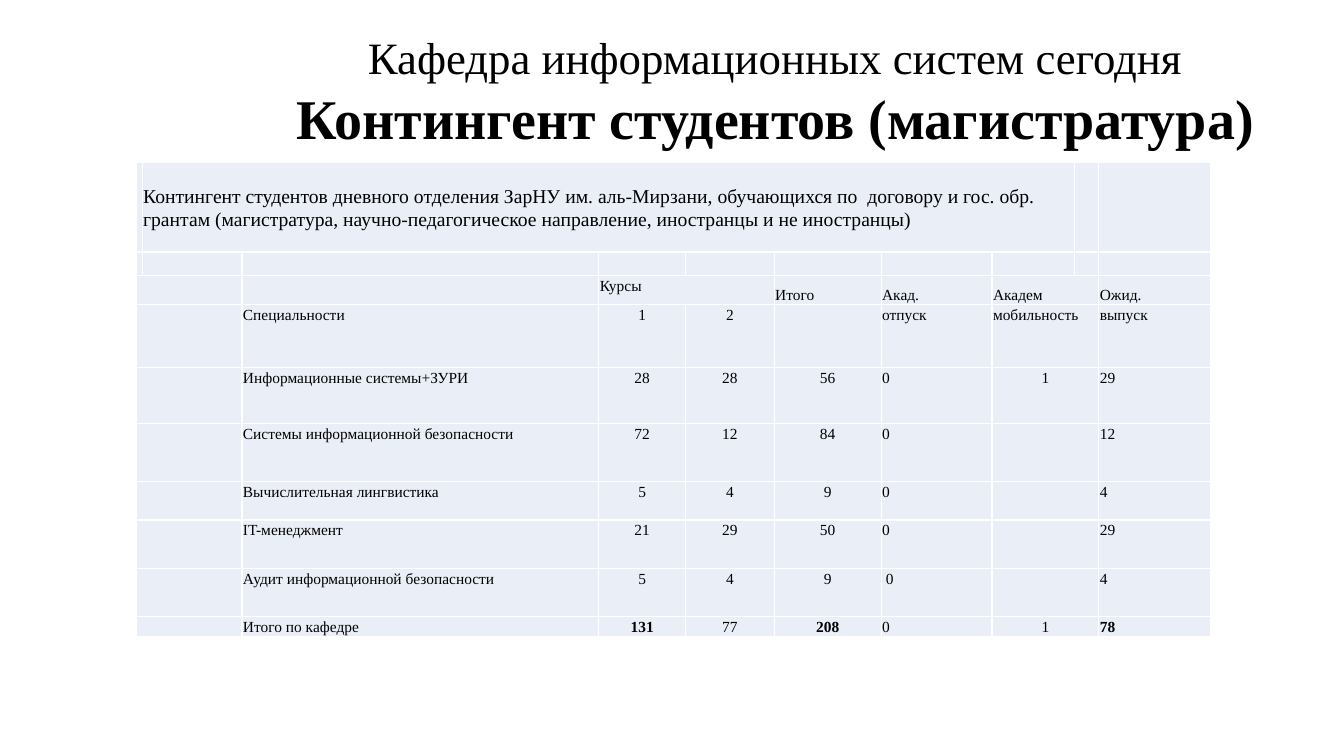
from pptx import Presentation
from pptx import util as u
from pptx.dml.color import RGBColor
from pptx.enum import text

COLORS = {"ink": "000000", "cell": "EAEFF7"}
FONT = "Times New Roman"
COLUMN_WIDTHS = [0.06, 0.99, 3.54, 0.86, 0.88, 1.06, 1.1, 0.82, 0.24, 1.11]
ROW_HEIGHTS = [0.89, 0.23, 0.29, 0.63, 0.55, 0.58, 0.38, 0.48, 0.48, 0.17]
FIELD_COLUMNS = [2, 3, 4, 5, 6, 7, 9]
CENTERED_COLUMNS = {3, 4, 5, 7}
CAPTION = (
    "Контингент студентов дневного отделения ЗарНУ им. аль-Мирзани, "
    "обучающихся по  договору и гос. обр. грантам (магистратура, "
    "научно-педагогическое направление, иностранцы и не иностранцы)"
)
HEADINGS = ["", "Курсы", "", "Итого", "Акад.", "Академ", "Ожид."]
SUBHEADINGS = ["Специальности", "1", "2", "", "отпуск", "мобильность", "выпуск"]
SPECIALTIES = [
    ["Информационные системы+ЗУРИ", "28", "28", "56", "0", "1", "29"],
    ["Системы информационной безопасности", "72", "12", "84", "0", "", "12"],
    ["Вычислительная лингвистика", "5", "4", "9", "0", "", "4"],
    ["IT-менеджмент", "21", "29", "50", "0", "", "29"],
    ["Аудит информационной безопасности", "5", "4", "9", " 0", "", "4"],
    ["Итого по кафедре", "131", "77", "208", "0", "1", "78"],
]
BOLD_TOTALS = {"131", "208", "78"}


def add_run(paragraph, words, size, bold=False):
    run = paragraph.add_run()
    run.text = words
    run.font.name = FONT
    run.font.size = u.Pt(size)
    run.font.bold = bold
    run.font.color.rgb = RGBColor.from_string(COLORS["ink"])


def fill_title(title):
    title.left, title.top = u.Inches(2.05), u.Inches(0.24)
    title.width, title.height = u.Inches(11.28), u.Inches(1.25)
    frame = title.text_frame
    frame.word_wrap = True
    frame.auto_size = text.MSO_AUTO_SIZE.NONE
    frame.vertical_anchor = text.MSO_ANCHOR.TOP
    heading = frame.paragraphs[0]
    heading.alignment = text.PP_ALIGN.CENTER
    heading.line_spacing = 1.0
    add_run(heading, "Кафедра информационных систем сегодня", 32)
    heading.add_line_break()
    add_run(heading, "Контингент студентов (магистратура)", 40, True)


def style_cell(cell):
    cell.fill.solid()
    cell.fill.fore_color.rgb = RGBColor.from_string(COLORS["cell"])
    cell.margin_left = cell.margin_right = cell.margin_top = u.Inches(0.01)
    cell.margin_bottom = 0
    paragraph = cell.text_frame.paragraphs[0]
    paragraph._p.get_or_add_endParaRPr().set("sz", "1100")


def write_cell(cell, words, size=11, centered=False, bold=False,
               anchor=text.MSO_ANCHOR.TOP):
    cell.vertical_anchor = anchor
    paragraph = cell.text_frame.paragraphs[0]
    paragraph.alignment = text.PP_ALIGN.CENTER if centered else text.PP_ALIGN.LEFT
    paragraph.line_spacing = 1.07
    paragraph.space_after = u.Pt(8)
    add_run(paragraph, words, size, bold)


def add_enrolment_grid(slide):
    enrolment = slide.shapes.add_table(
        len(ROW_HEIGHTS), len(COLUMN_WIDTHS), u.Inches(1.35), u.Inches(1.61),
        u.Inches(sum(COLUMN_WIDTHS)), u.Inches(sum(ROW_HEIGHTS))).table
    enrolment.first_row = enrolment.horz_banding = False
    for column, width in zip(enrolment.columns, COLUMN_WIDTHS):
        column.width = u.Inches(width)
    for row, height in zip(enrolment.rows, ROW_HEIGHTS):
        row.height = u.Inches(height)
    for cell in enrolment.iter_cells():
        style_cell(cell)
    spans = [(0, 1, 7), (2, 3, 4)]
    for row in range(2, len(ROW_HEIGHTS)):
        spans += [(row, 0, 1), (row, 7, 8)]
    for row, first, last in spans:
        enrolment.cell(row, first).merge(enrolment.cell(row, last))
    return enrolment


def fill_enrolment(enrolment):
    write_cell(enrolment.cell(0, 1), CAPTION, 14, anchor=text.MSO_ANCHOR.MIDDLE)
    for row, fields in enumerate([HEADINGS, SUBHEADINGS, *SPECIALTIES], start=2):
        for column, words in zip(FIELD_COLUMNS, fields):
            if not words:
                continue
            lowered = row == 2 and column > 3
            numeric = row > 3 or words.isdigit()
            write_cell(
                enrolment.cell(row, column), words,
                centered=numeric and column in CENTERED_COLUMNS,
                bold=words in BOLD_TOTALS,
                anchor=text.MSO_ANCHOR.BOTTOM if lowered else text.MSO_ANCHOR.TOP)


def main():
    """Build the slide on master's student enrolment."""
    deck = Presentation()
    deck.slide_width, deck.slide_height = u.Inches(13.33), u.Inches(7.5)
    slide = deck.slides.add_slide(deck.slide_layouts[5])
    fill_title(slide.shapes.title)
    fill_enrolment(add_enrolment_grid(slide))
    deck.save("out.pptx")


if __name__ == "__main__":
    main()
